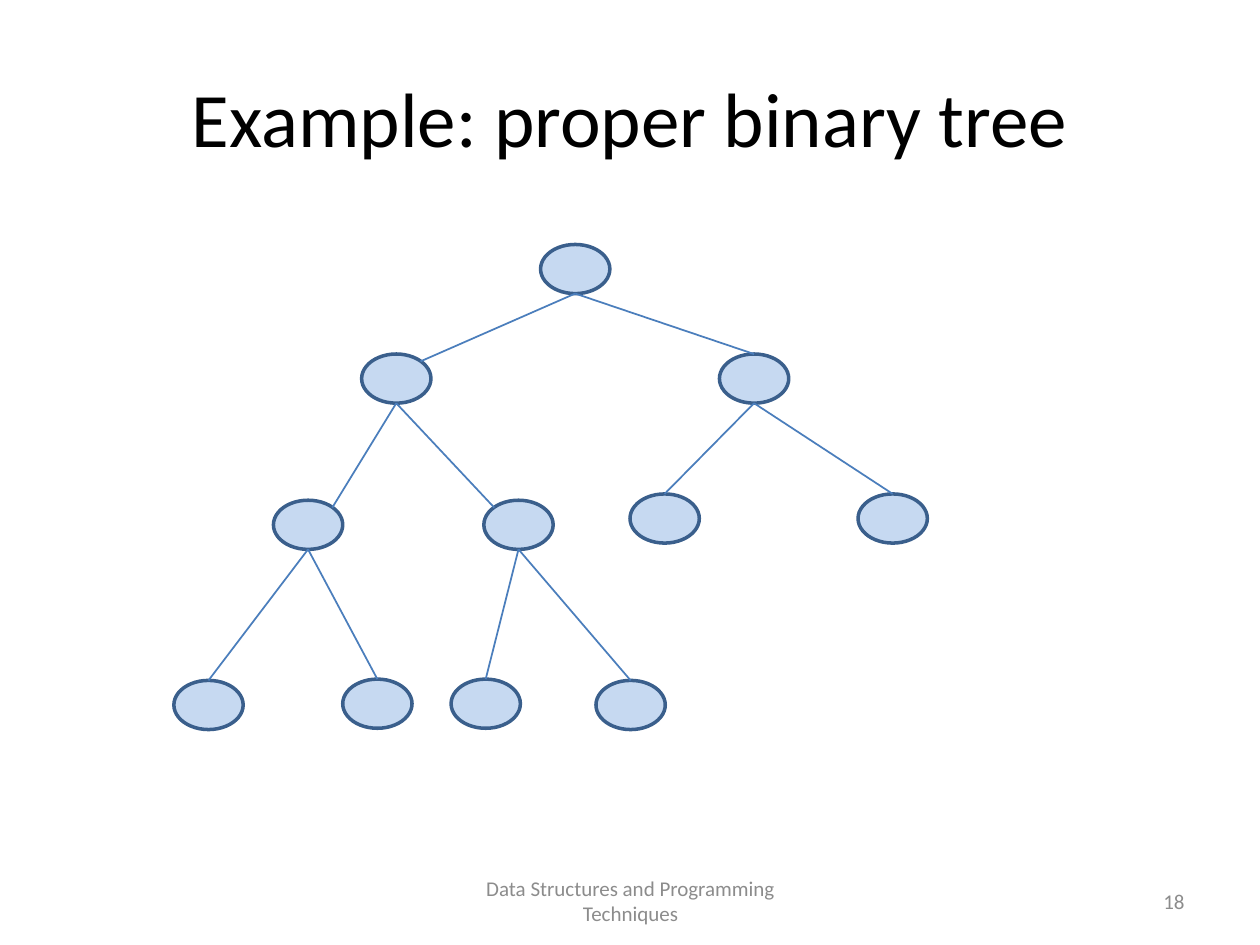
"""Build a slide that shows a proper binary tree."""
from lxml import etree
from pptx import Presentation
from pptx.dml.color import RGBColor
from pptx.enum.shapes import MSO_CONNECTOR, MSO_SHAPE
from pptx.enum.text import MSO_ANCHOR, PP_ALIGN
from pptx.oxml.ns import qn
from pptx.util import Emu, Pt

ELLIPSE, STRAIGHT = MSO_SHAPE.OVAL, MSO_CONNECTOR.STRAIGHT
MIDDLE, CENTER, RIGHT = MSO_ANCHOR.MIDDLE, PP_ALIGN.CENTER, PP_ALIGN.RIGHT

EMU_PER_PX = 9144
SLIDE_SIZE = (1000, 750)
TITLE_ONLY = 5
FONT = "Calibri"
COLORS = {"title": "000000", "footer": "8C8C8C", "node": "C6D9F1",
          "outline": "3A5F8C", "edge": "4B7EBC"}

TITLE = ("Example: proper binary tree", (50, 30, 900, 125))
FOOTERS = [
    ("Data Structures and Programming Techniques", (342, 695, 317, 40), CENTER),
    ("18", (717, 695, 233, 40), RIGHT),
]

NODE_WIDTH, NODE_HEIGHT = 55, 39
NODES = {
    "root": (429, 194),
    "left": (287, 281), "right": (571, 281),
    "left-left": (217, 397), "left-right": (384, 397),
    "right-left": (500, 392), "right-right": (681, 392),
    "leaf 1": (138, 540), "leaf 2": (272, 539),
    "leaf 3": (358, 539), "leaf 4": (473, 540),
}
EDGES = [
    ("root", "left", "top right"), ("root", "right", "top"),
    ("left", "left-left", "top right"), ("left", "left-right", "top left"),
    ("right", "right-left", "top"), ("right", "right-right", "top"),
    ("left-left", "leaf 1", "top"), ("left-left", "leaf 2", "top"),
    ("left-right", "leaf 3", "top"), ("left-right", "leaf 4", "top"),
]
ANCHORS = {"top": (0.5, 0), "bottom": (0.5, 1),
           "top left": (0.15, 0.15), "top right": (0.85, 0.15)}


def px(*lengths):
    return [Emu(round(length * EMU_PER_PX)) for length in lengths]


def color(name):
    return RGBColor.from_string(COLORS[name])


def write(shape, text, size, color_name, alignment):
    frame = shape.text_frame
    frame.word_wrap = True
    frame.vertical_anchor = MIDDLE
    paragraph = frame.paragraphs[0]
    paragraph.alignment = alignment
    run = paragraph.add_run()
    run.text = text
    run.font.name = FONT
    run.font.size = Pt(size)
    run.font.color.rgb = color(color_name)


def add_node(slide, position):
    node = slide.shapes.add_shape(ELLIPSE, *px(*position, NODE_WIDTH, NODE_HEIGHT))
    node.shadow.inherit = False
    node.fill.solid()
    node.fill.fore_color.rgb = color("node")
    node.line.color.rgb = color("outline")
    node.line.width = Pt(2)


def anchor_point(node_name, anchor):
    left, top = NODES[node_name]
    across, down = ANCHORS[anchor]
    return left + across * NODE_WIDTH, top + down * NODE_HEIGHT


def add_edge(slide, parent, child, anchor):
    start, end = anchor_point(parent, "bottom"), anchor_point(child, anchor)
    edge = slide.shapes.add_connector(STRAIGHT, *px(*start, *end))
    edge.line.color.rgb = color("edge")
    edge.line.width = Pt(1)
    etree.SubElement(edge._element.spPr, qn("a:effectLst"))


def main():
    presentation = Presentation()
    presentation.slide_width, presentation.slide_height = px(*SLIDE_SIZE)
    slide = presentation.slides.add_slide(presentation.slide_layouts[TITLE_ONLY])

    text, box = TITLE
    title = slide.shapes.title
    title.left, title.top, title.width, title.height = px(*box)
    write(title, text, 44, "title", CENTER)

    for position in NODES.values():
        add_node(slide, position)
    for parent, child, anchor in EDGES:
        add_edge(slide, parent, child, anchor)
    for text, box, alignment in FOOTERS:
        write(slide.shapes.add_textbox(*px(*box)), text, 12, "footer", alignment)

    presentation.save("out.pptx")


if __name__ == "__main__":
    main()
